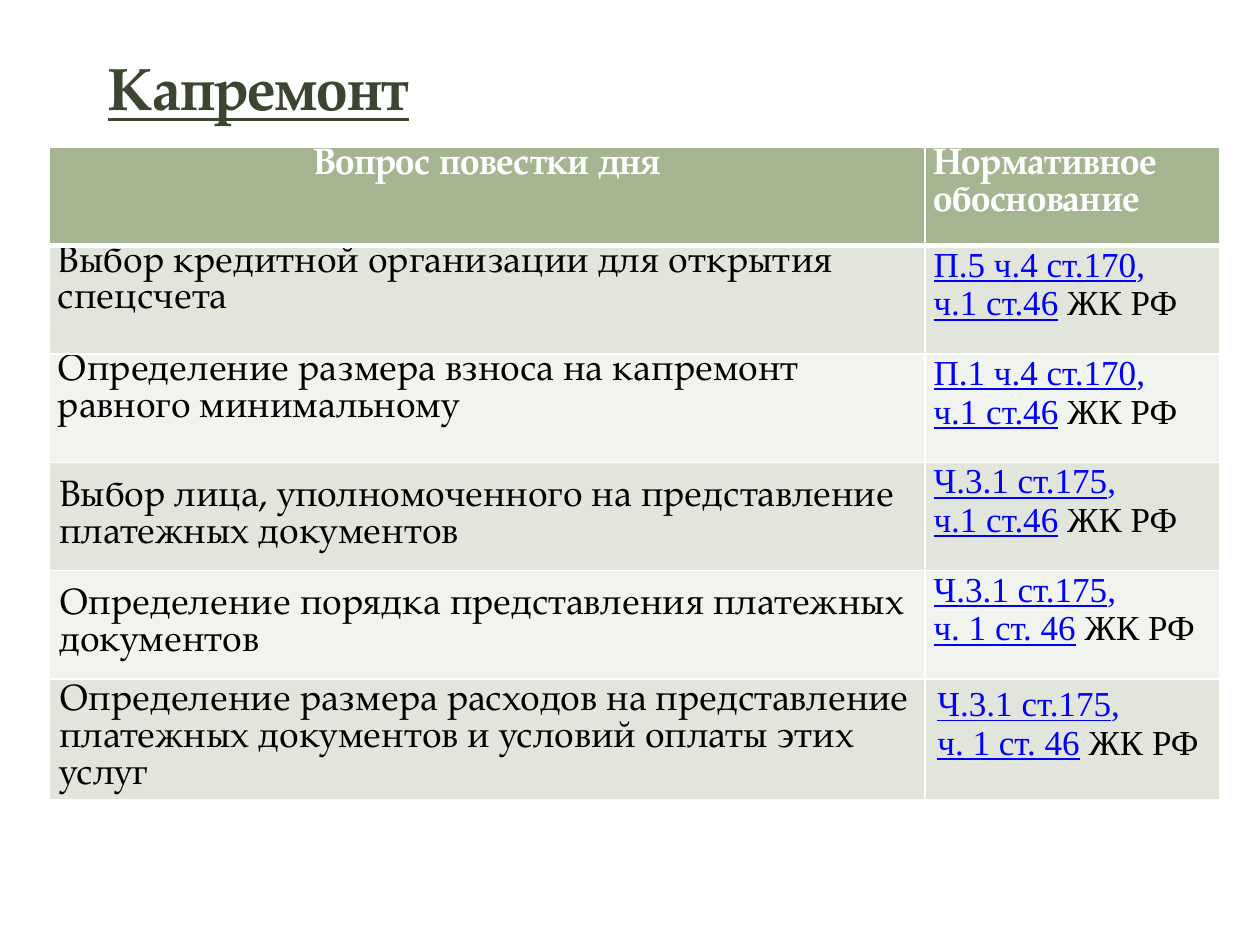
from lxml.etree import SubElement
from pptx import Presentation
from pptx.dml.color import RGBColor
from pptx.enum.text import MSO_ANCHOR, PP_ALIGN
from pptx.oxml.ns import qn
from pptx.util import Inches, Pt

SERIF = "TeX Gyre Pagella"
TIMES = "Times New Roman"
HEADERS = ("Вопрос повестки дня", "Нормативное обоснование")
QUESTIONS = (
    ("Выбор кредитной организации для открытия спецсчета", "П.5 ч.4 ст.170", "ч.1 ст.46"),
    ("Определение размера взноса на капремонт равного минимальному", "П.1 ч.4 ст.170", "ч.1 ст.46"),
    ("Выбор лица, уполномоченного на представление платежных документов", "Ч.3.1 ст.175", "ч.1 ст.46"),
    ("Определение порядка представления платежных документов", "Ч.3.1 ст.175", "ч. 1 ст. 46"),
    ("Определение размера расходов на представление платежных документов и условий оплаты этих услуг",
     "Ч.3.1 ст.175", "ч. 1 ст. 46"),
)
COLUMN_WIDTHS = (6.95, 2.34)
ROW_HEIGHTS = (0.78, 0.86, 0.86, 0.86, 0.86, 0.96)
TIGHT = (0.07, 0)
MIDDLE = (0.08, 0.04)
LOOSE = (0.1, 0.05)


def color(value):
    """Turn a hex string into a colour."""
    return RGBColor.from_string(value)


def format_span(span, font, size, hex_color, bold=False, underline=False):
    """Format one run of text."""
    span.font.name = font
    span.font.size = Pt(size)
    span.font.color.rgb = color(hex_color)
    span.font.bold = bold
    span.font.underline = underline


def format_cell(cell, fill, margins, top=1, bottom=1):
    """Give a cell white borders, a fill and margins."""
    properties = cell._tc.get_or_add_tcPr()
    for side, width in (("L", 1), ("R", 1), ("T", top), ("B", bottom)):
        line = SubElement(properties, qn(f"a:ln{side}"), w=str(Pt(width)))
        SubElement(SubElement(line, qn("a:solidFill")), qn("a:srgbClr"), val="FFFFFF")
    cell.fill.solid()
    cell.fill.fore_color.rgb = color(fill)
    cell.margin_left = cell.margin_right = Inches(margins[0])
    cell.margin_top = cell.margin_bottom = Inches(margins[1])


def write_serif(cell, text, hex_color, align, bold=False):
    """Write a tightly spaced paragraph into a cell."""
    cell.text_frame.text = text
    para = cell.text_frame.paragraphs[0]
    para.alignment = align
    para.line_spacing = Pt(21)
    format_span(para.runs[0], SERIF, 21, hex_color, bold)


def write_articles(cell, first, second, align):
    """Write the two lines of a legal reference."""
    lines = (
        ((first, "0000FF", True), (",", "0000FF", False)),
        ((second, "0000FF", True), (" ЖК РФ", "000000", False)),
    )
    cell.text_frame.text = "\n".join("" for _ in lines)
    for para, parts in zip(cell.text_frame.paragraphs, lines):
        para.alignment = align
        for text, hex_color, underline in parts:
            span = para.add_run()
            span.text = text
            format_span(span, TIMES, 20, hex_color, underline=underline)


def place_title(page, left, top, width, height):
    """Place and format the slide title."""
    box = page.shapes.title
    box.left, box.top, box.width, box.height = (Inches(n) for n in (left, top, width, height))
    frame = box.text_frame
    frame.text = "Капремонт"
    frame.margin_left = frame.margin_right = frame.margin_top = frame.margin_bottom = 0
    frame.vertical_anchor = MSO_ANCHOR.TOP
    para = frame.paragraphs[0]
    para.alignment = PP_ALIGN.LEFT
    para.line_spacing = Pt(34)
    format_span(para.runs[0], SERIF, 34, "3C452F", bold=True, underline=True)


def place_agenda(page, left, top, width, height):
    """Place the table of agenda questions and legal references."""
    box = page.shapes.add_table(len(ROW_HEIGHTS), len(COLUMN_WIDTHS),
                                Inches(left), Inches(top), Inches(width), Inches(height))
    table = box.table
    for column, size in zip(table.columns, COLUMN_WIDTHS):
        column.width = Inches(size)
    for row, size in zip(table.rows, ROW_HEIGHTS):
        row.height = Inches(size)

    for index, align in enumerate((PP_ALIGN.CENTER, PP_ALIGN.JUSTIFY)):
        cell = table.cell(0, index)
        format_cell(cell, "A5B592", TIGHT, bottom=3)
        write_serif(cell, HEADERS[index], "FFFFFF", align, bold=True)

    for number, (question, first, second) in enumerate(QUESTIONS, 1):
        fill = "E1E5DC" if number % 2 else "F0F3EE"
        top_line = 3 if number == 1 else 1
        centered = number > 2
        last = number == len(QUESTIONS)
        cell, reference = table.cell(number, 0), table.cell(number, 1)
        format_cell(cell, fill, MIDDLE if centered else TIGHT, top=top_line)
        cell.vertical_anchor = MSO_ANCHOR.MIDDLE if centered else MSO_ANCHOR.TOP
        write_serif(cell, question, "000000", PP_ALIGN.LEFT)
        format_cell(reference, fill, LOOSE if last else TIGHT, top=top_line)
        write_articles(reference, first, second, PP_ALIGN.LEFT if last else PP_ALIGN.JUSTIFY)


def main():
    """Build and save the slide."""
    deck = Presentation()
    deck.slide_width, deck.slide_height = Inches(10), Inches(7.5)
    page = deck.slides.add_slide(deck.slide_layouts[5])
    place_title(page, 0.86, 0.5, 8.83, 0.5)
    place_agenda(page, 0.39, 1.17, sum(COLUMN_WIDTHS), sum(ROW_HEIGHTS))
    deck.save("out.pptx")


if __name__ == "__main__":
    main()
